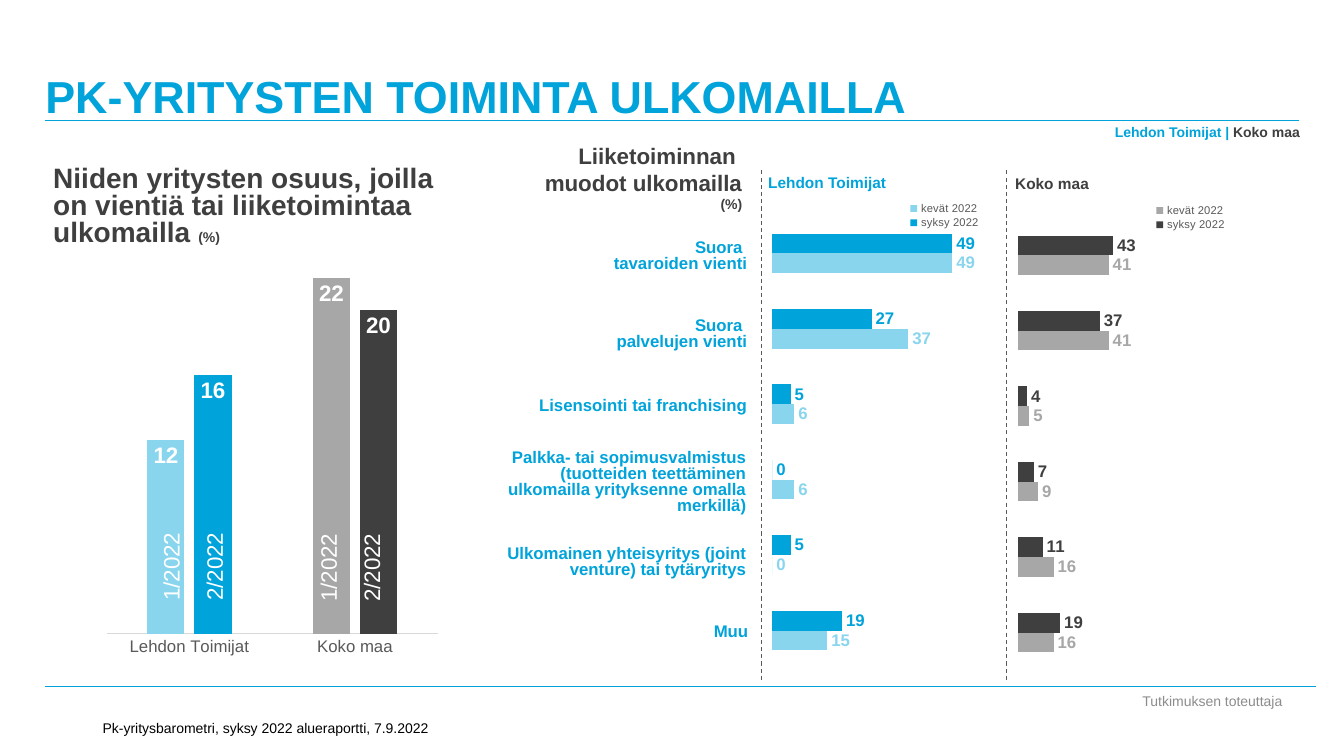
from dataclasses import dataclass

from lxml import etree
from pptx import Presentation
from pptx.chart.data import CategoryChartData
from pptx.dml.color import RGBColor
from pptx.enum import chart as charts, dml, shapes, text
from pptx.oxml import ns
from pptx.util import Inches, Pt


@dataclass(frozen=True)
class Theme:
    font: str = "Arial"
    blue: str = "00A3DA"
    light_blue: str = "8AD5EE"
    dark: str = "3F3F3F"
    grey: str = "A7A7A7"
    axis_text: str = "595959"
    axis_line: str = "D9D9D9"
    footer: str = "8C8C8C"
    black: str = "000000"
    white: str = "FFFFFF"
    title: int = 32
    heading: int = 20
    subheading: int = 16
    label: int = 12
    region: int = 11
    small: int = 10
    legend: int = 8


THEME = Theme()
LEFT, RIGHT, CENTER = text.PP_ALIGN.LEFT, text.PP_ALIGN.RIGHT, text.PP_ALIGN.CENTER
TOP, MIDDLE, BOTTOM = text.MSO_ANCHOR.TOP, text.MSO_ANCHOR.MIDDLE, text.MSO_ANCHOR.BOTTOM


def style_font(font, size, color, bold=False):
    font.name = THEME.font
    font.size = Pt(size)
    font.bold = bold
    font.color.rgb = RGBColor.from_string(color)


def style_para(para, size, color, bold, align, spacing=None):
    para.alignment = align
    if spacing:
        para.line_spacing = spacing
    for span in para.runs:
        style_font(span.font, size, color, bold)
    for line_break in para._p.findall(ns.qn("a:br")):
        etree.SubElement(line_break, ns.qn("a:rPr"), sz=str(size * 100))


def add_span(para, words, size, color):
    span = para.add_run()
    span.text = words
    style_font(span.font, size, color, True)


def add_text(page, place, words, size, color, bold=False, align=LEFT,
             spacing=None, anchor=TOP, rotation=0):
    box = page.shapes.add_textbox(*map(Inches, place))
    box.rotation = rotation
    frame = box.text_frame
    frame.word_wrap = True
    frame.vertical_anchor = anchor
    if anchor == TOP:
        frame.auto_size = text.MSO_AUTO_SIZE.SHAPE_TO_FIT_TEXT
    frame.text = words[0]
    for more in words[1:]:
        frame.add_paragraph().text = more
    for para in frame.paragraphs:
        style_para(para, size, color, bold, align, spacing)
    return frame.paragraphs[-1]


def add_line(page, start, end, color, dashed=False):
    line = page.shapes.add_connector(
        shapes.MSO_CONNECTOR.STRAIGHT, *map(Inches, (*start, *end)))
    line.line.color.rgb = RGBColor.from_string(color)
    line.line.width = Pt(0.75)
    if dashed:
        line.line.dash_style = dml.MSO_LINE.DASH
    etree.SubElement(line._element.spPr, ns.qn("a:effectLst"))


def set_layout(parent, after, place, inner=False):
    for old in parent.findall(ns.qn("c:layout")):
        parent.remove(old)
    layout = etree.Element(ns.qn("c:layout"))
    manual = etree.SubElement(layout, ns.qn("c:manualLayout"))
    settings = [("layoutTarget", "inner")] if inner else []
    settings += [("xMode", "edge"), ("yMode", "edge"), *zip("xywh", place)]
    for name, value in settings:
        etree.SubElement(manual, ns.qn(f"c:{name}"), val=str(value))
    if after is None:
        parent.insert(0, layout)
    else:
        after.addnext(layout)


def style_labels(series, size, color, position):
    labels = series.data_labels
    labels.show_value = True
    labels.number_format = "#,##0"
    labels.number_format_is_linked = False
    labels.position = position
    style_font(labels.font, size, color, True)


def add_chart(page, kind, place, categories, rows, top_value, plot_place, gap):
    values = CategoryChartData()
    values.categories = categories
    for name, numbers in rows:
        values.add_series(name, numbers)
    chart = page.shapes.add_chart(kind, *map(Inches, place), values).chart
    style_font(chart.font, THEME.small, THEME.black)
    chart.has_title = False
    chart.has_legend = False
    axis = chart.value_axis
    axis.minimum_scale = 0
    axis.maximum_scale = top_value
    axis.has_major_gridlines = False
    axis.visible = False
    plot = chart.plots[0]
    plot.vary_by_categories = False
    plot.gap_width = gap
    area = chart._chartSpace.find(".//" + ns.qn("c:plotArea"))
    set_layout(area, None, plot_place, inner=True)
    return chart


def fill(item, color):
    item.format.fill.solid()
    item.format.fill.fore_color.rgb = RGBColor.from_string(color)


def add_share_chart(page):
    chart = add_chart(
        page, charts.XL_CHART_TYPE.COLUMN_CLUSTERED, (0.99, 2.14, 3.42, 4.46),
        ["Lehdon Toimijat", "Koko maa"],
        [("1/2022", (12, 22)), ("2/2022", (16, 20))],
        25, (0.02, 0.03, 0.96, 0.9), 219)
    chart.plots[0].overlap = -27
    axis = chart.category_axis
    axis.major_tick_mark = charts.XL_TICK_MARK.NONE
    axis.format.line.color.rgb = RGBColor.from_string(THEME.axis_line)
    axis.format.line.width = Pt(0.75)
    style_font(axis.tick_labels.font, THEME.label, THEME.axis_text)
    palette = [(THEME.light_blue, THEME.grey), (THEME.blue, THEME.dark)]
    for series, colors in zip(chart.plots[0].series, palette):
        fill(series, colors[0])
        for index, color in enumerate(colors):
            fill(series.points[index], color)
        style_labels(series, THEME.subheading, THEME.white,
                     charts.XL_LABEL_POSITION.INSIDE_END)


def add_forms_chart(page, left, top, top_value, autumn, spring, colors):
    chart = add_chart(
        page, charts.XL_CHART_TYPE.BAR_CLUSTERED, (left, top, 2.28, 4.99),
        ["1", "2", "3", "4", "5", "6"],
        [("syksy 2022", autumn), ("kevät 2022", spring)],
        top_value, (0, 0.09, 0.96, 0.9), 182)
    chart.category_axis.reverse_order = True
    chart.category_axis.visible = False
    for series, color in zip(chart.plots[0].series, colors):
        fill(series, color)
        style_labels(series, THEME.label, color, charts.XL_LABEL_POSITION.OUTSIDE_END)
    chart.has_legend = True
    legend = chart.legend
    legend.position = charts.XL_LEGEND_POSITION.RIGHT
    legend.include_in_layout = False
    style_font(legend.font, THEME.legend, THEME.axis_text)
    element = legend._element
    set_layout(element, element.find(ns.qn("c:legendPos")), (0.58, 0.06, 0.34, 0.06))


def add_title(page, words):
    title = page.shapes.title
    title.left, title.top, title.width, title.height = map(Inches, (0.45, 0, 12.3, 1.22))
    frame = title.text_frame
    frame.margin_left = frame.margin_right = frame.margin_top = frame.margin_bottom = 0
    frame.vertical_anchor = BOTTOM
    frame.auto_size = text.MSO_AUTO_SIZE.NONE
    frame.text = words
    style_para(frame.paragraphs[0], THEME.title, THEME.blue, True, LEFT)


def main():
    deck = Presentation()
    deck.slide_width, deck.slide_height = Inches(13.33), Inches(7.5)
    page = deck.slides.add_slide(deck.slide_layouts[5])
    add_title(page, "PK-YRITYSTEN TOIMINTA ULKOMAILLA")
    add_line(page, (0.45, 1.2), (12.88, 1.2), THEME.blue)
    add_line(page, (0.45, 6.81), (13.05, 6.81), THEME.blue)
    add_text(page, (11.16, 6.82, 1.73, 0.26), ["Tutkimuksen toteuttaja"],
             THEME.small, THEME.footer, align=CENTER, anchor=MIDDLE)
    add_text(page, (0.92, 7, 4.17, 0.35),
             ["Pk-yritysbarometri, syksy 2022 alueraportti, 7.9.2022"],
             THEME.small, THEME.black, anchor=BOTTOM)
    para = add_text(page, (8.13, 1.18, 4.86, 0.27), ["Lehdon Toimijat | "],
                    THEME.small, THEME.blue, True, RIGHT)
    add_span(para, "Koko maa", THEME.small, THEME.dark)

    para = add_text(page, (5.26, 1.36, 2.2, 0.81),
                    ["Liiketoiminnan ", "muodot ulkomailla\v"],
                    THEME.subheading, THEME.dark, True, RIGHT)
    add_span(para, "(%)", THEME.small, THEME.dark)
    forms = [
        ("Suora \vtavaroiden vienti", 5.2, 2.34, 2.31, 0.42),
        ("Suora \vpalvelujen vienti", 5.2, 3.11, 2.31, 0.42),
        ("Lisensointi tai franchising", 5.2, 3.91, 2.31, 0.26),
        ("Palkka- tai sopimusvalmistus (tuotteiden teettäminen ulkomailla "
         "yrityksenne omalla merkillä)", 4.6, 4.42, 2.9, 0.75),
        ("Ulkomainen yhteisyritys (joint venture) tai tytäryritys", 4.62, 5.37, 2.88, 0.42),
        ("Muu", 5.95, 6.15, 1.57, 0.26),
    ]
    for words, *place in forms:
        add_text(page, place, [words], THEME.label, THEME.blue, True, RIGHT, 0.8)

    add_text(page, (7.52, 1.67, 2.45, 0.29), ["Lehdon Toimijat"],
             THEME.region, THEME.blue, True)
    add_text(page, (9.97, 1.68, 1.03, 0.29), ["Koko maa"], THEME.region, THEME.dark, True)
    for left in (7.55, 9.98):
        add_line(page, (left, 1.69), (left, 6.77), THEME.axis_text, dashed=True)

    add_share_chart(page)
    for left, top in ((1.18, 5.36), (2.74, 5.37)):
        for index, period in enumerate(("1/2022", "2/2022")):
            add_text(page, (left + 0.43 * index, top, 1.03, 0.37), [period],
                     THEME.subheading, THEME.white, rotation=270)
    add_forms_chart(page, 7.66, 1.69, 60, (49, 27, 5, 0, 5, 19),
                    (49, 37, 6, 6, 0, 15), (THEME.blue, THEME.light_blue))
    add_forms_chart(page, 10.1, 1.71, 100, (43, 37, 4, 7, 11, 19),
                    (41, 41, 5, 9, 16, 16), (THEME.dark, THEME.grey))

    para = add_text(page, (0.43, 1.61, 4.86, 0.91),
                    ["Niiden yritysten osuus, joilla \von vientiä tai "
                     "liiketoimintaa \vulkomailla "],
                    THEME.heading, THEME.dark, True, spacing=0.8)
    add_span(para, "(%)", THEME.small, THEME.dark)
    deck.save("out.pptx")


if __name__ == "__main__":
    main()
